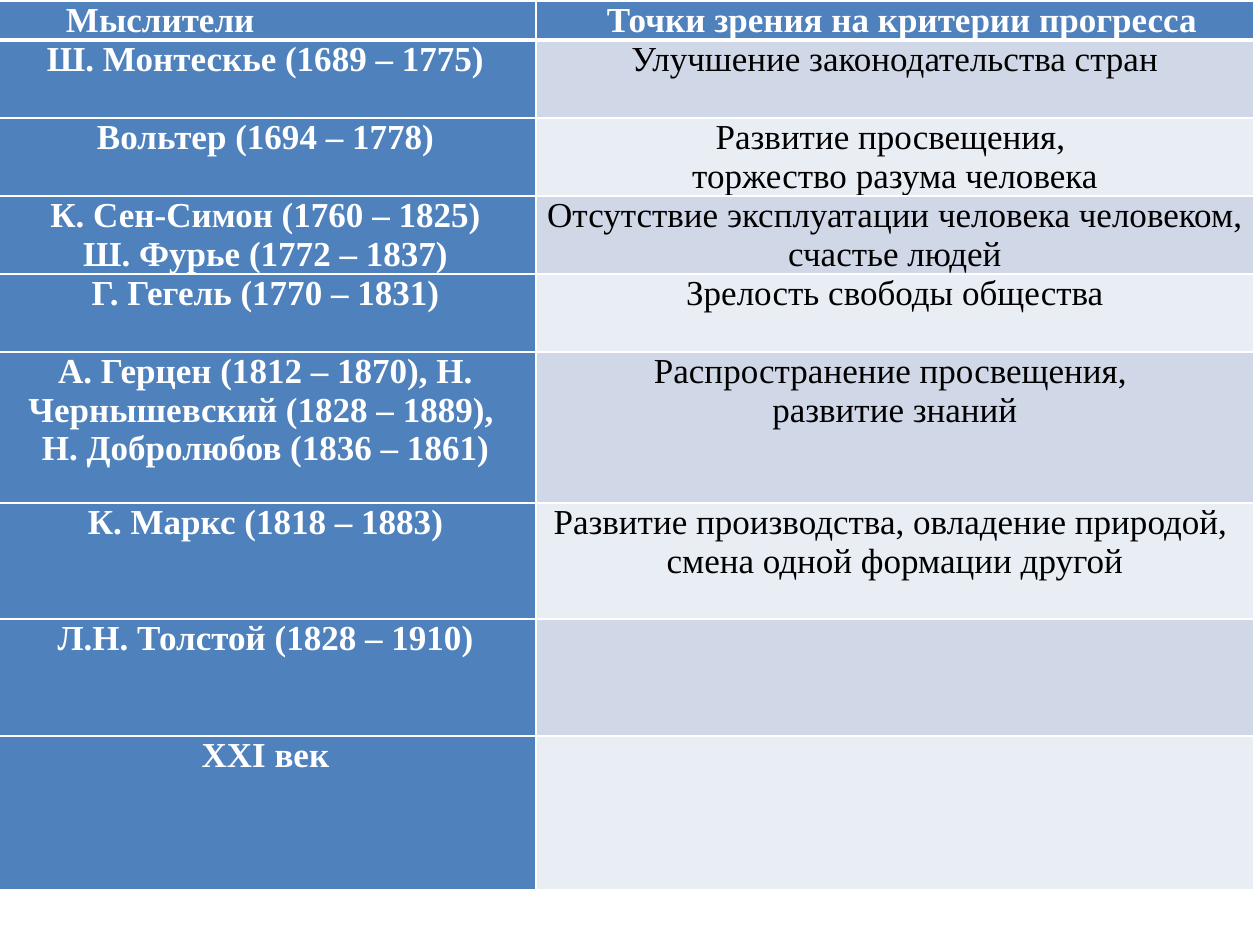
from lxml import etree
from pptx import Presentation
from pptx import util as u
from pptx.dml.color import RGBColor
from pptx.enum import text
from pptx.oxml import ns

PX = u.Inches(1) // 126
BLUE = RGBColor(0x4F, 0x81, 0xBD)
BANDS = [RGBColor(0xD0, 0xD8, 0xE8), RGBColor(0xE9, 0xED, 0xF4)]
WHITE = RGBColor(0xFF, 0xFF, 0xFF)
BLACK = RGBColor(0, 0, 0)

COLS = [541, 718]
# Row height, thinker, view; a line break starts a new paragraph
ROWS = [
    (39, "Мыслители", "Точки зрения на критерии прогресса"),
    (78, "Ш. Монтескье (1689 – 1775)", "Улучшение законодательства стран"),
    (78, "Вольтер (1694 – 1778)",
     "Развитие просвещения, \nторжество разума человека"),
    (78, "К. Сен-Симон (1760 – 1825)\nШ. Фурье (1772 – 1837)",
     "Отсутствие эксплуатации человека человеком, счастье людей"),
    (78, "Г. Гегель (1770 – 1831)", "Зрелость свободы общества"),
    (151, "А. Герцен (1812 – 1870), Н. Чернышевский (1828 – 1889), \n"
          "Н. Добролюбов (1836 – 1861)",
     "Распространение просвещения, \nразвитие знаний"),
    (116, "К. Маркс (1818 – 1883)",
     "Развитие производства, овладение природой, \n"
     "смена одной формации другой"),
    (117, "Л.Н. Толстой (1828 – 1910)", ""),
    (154, "XXI век", ""),
]


def edge(cell, side, width):
    line = etree.SubElement(cell._tc.get_or_add_tcPr(), ns.qn("a:ln" + side),
                            w=str(u.Pt(width)))
    fill = etree.SubElement(line, ns.qn("a:solidFill"))
    etree.SubElement(fill, ns.qn("a:srgbClr"), val=str(WHITE))


def fill_cell(cell, words, row, col):
    head = row == 0
    bold = head or col == 0
    thick = {(0, "B"), (1, "T")}
    for side in "LRTB":
        edge(cell, side, 3 if (row, side) in thick else 1)
    cell.fill.solid()
    cell.fill.fore_color.rgb = BLUE if bold else BANDS[(row - 1) % 2]
    cell.margin_left = cell.margin_right = 9 * PX
    cell.margin_top = cell.margin_bottom = 0
    cell.text = words
    for para in cell.text_frame.paragraphs:
        if head:
            para.alignment = text.PP_ALIGN.JUSTIFY
            para._p.get_or_add_pPr().set("indent", str(62 * PX))
        else:
            para.alignment = text.PP_ALIGN.CENTER
        font = para.font
        font.name = "Times New Roman"
        font.size = u.Pt(20)
        font.bold = bold
        font.color.rgb = WHITE if bold else BLACK


def add_views(slide, left, top):
    """Table of thinkers and their criteria of progress."""
    high = sum(row[0] for row in ROWS)
    box = [v * PX for v in (left, top, sum(COLS), high)]
    table = slide.shapes.add_table(len(ROWS), len(COLS), *box).table
    for col, width in zip(table.columns, COLS):
        col.width = width * PX
    for r, (height, *cells) in enumerate(ROWS):
        table.rows[r].height = height * PX
        for c, words in enumerate(cells):
            fill_cell(table.cell(r, c), words, r, c)


def main():
    deck = Presentation()
    deck.slide_width, deck.slide_height = u.Inches(10), u.Inches(7.5)
    slide = deck.slides.add_slide(deck.slide_layouts[6])
    add_views(slide, -5, 1)
    deck.save("out.pptx")


if __name__ == "__main__":
    main()
